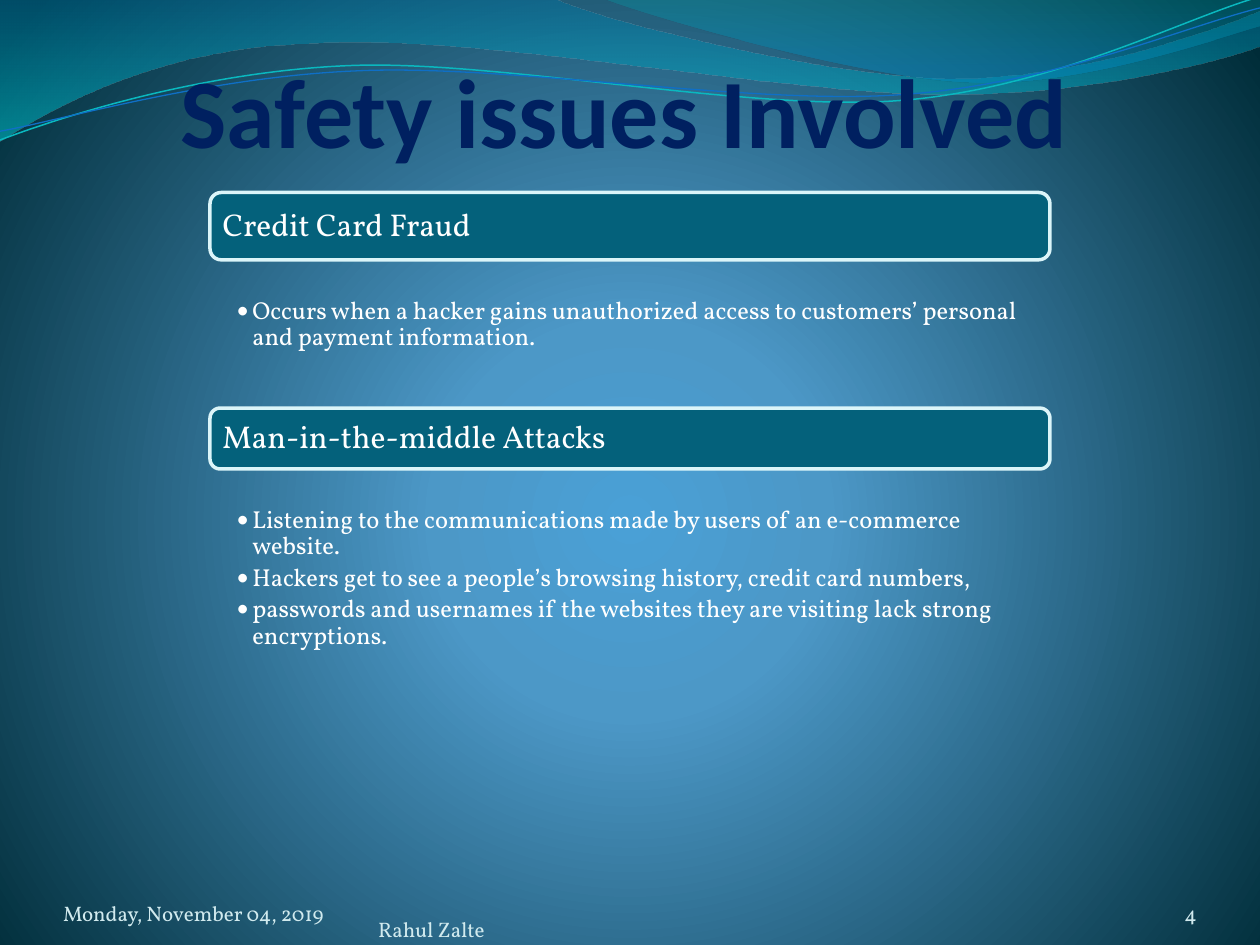
from dataclasses import dataclass
from typing import Optional

from lxml import etree
from pptx import Presentation
from pptx import util as u
from pptx.dml.color import RGBColor
from pptx.enum import shapes, text
from pptx.oxml import ns

NAVY = RGBColor(0x00, 0x20, 0x60)
PALE = RGBColor(0xD1, 0xEA, 0xEE)
WHITE = RGBColor(0xFF, 0xFF, 0xFF)
TEAL = RGBColor(0x04, 0x61, 0x7B)
ICE = RGBColor(0xDB, 0xF5, 0xF9)
AQUA = RGBColor(0x0A, 0xB8, 0xBF)
BLUE = RGBColor(0x0F, 0x6F, 0xC6)
WAVE_BLUE = RGBColor(0x00, 0x74, 0xA1)
WAVE_AQUA = RGBColor(0x00, 0xC6, 0xCF)
WAVE_GREEN = RGBColor(0x00, 0xA1, 0xA9)
WAVE_AZURE = RGBColor(0x00, 0x8B, 0xBF)
BACKGROUND_STOPS = (
    (0, RGBColor(0x4A, 0xA0, 0xD6)),
    (25, RGBColor(0x4C, 0x98, 0xC7)),
    (100, RGBColor(0x00, 0x2C, 0x38)),
)
TITLE_FONT, BODY_FONT = "Calibri", "Vollkorn"
LIST_LEFT, LIST_WIDTH = 120, 480


@dataclass(frozen=True)
class Stop:
    position: float
    color: RGBColor
    alpha: int


@dataclass(frozen=True)
class Wave:
    start: tuple
    segments: tuple
    stops: tuple = ()
    line_color: Optional[RGBColor] = None
    line_width: float = 0


@dataclass(frozen=True)
class Label:
    content: str
    left: float
    top: float
    width: float
    height: float
    size: float = 12
    color: RGBColor = PALE
    font: str = BODY_FONT
    bold: bool = False
    align: text.PP_ALIGN = text.PP_ALIGN.LEFT


@dataclass(frozen=True)
class Issue:
    heading: str
    top: float
    heading_height: float
    body_height: float
    points: tuple


WAVES = (
    Wave((0, 0), (
        ((317, -0.7),),
        ((343, 12), (478, 45), (546, 45)),
        ((614, 45), (690, 19), (720, 6.5)),
        ((721, 26),),
        ((708, 32), (626, 55), (537, 54)),
        ((448, 54), (275, 20), (185, 24.5)),
        ((93, 26), (33, 60), (-0.7, 81)),
    ), (Stop(0, WAVE_BLUE, 45), Stop(1, WAVE_AQUA, 55))),
    Wave((345, -0.7), (
        ((366, 8), (491, 45), (554, 47)),
        ((616, 50), (692, 23), (720, 15)),
        ((720, 0),),
    ), (Stop(0, WAVE_GREEN, 30), Stop(0.8, WAVE_AZURE, 45))),
    Wave((0, 80), (
        ((34.5, 67), (114, 41), (199.5, 37.5)),
        ((284.5, 34), (427, 64), (513.5, 57.5)),
        ((600, 51), (675.5, 11), (718.5, -1.5)),
    ), line_color=AQUA, line_width=0.85),
    Wave((0, 75), (
        ((34, 69), (118, 44), (204, 40.5)),
        ((290, 36.5), (430, 60.5), (516, 54)),
        ((602, 48), (677.5, 15), (720, 4.5)),
    ), line_color=BLUE, line_width=0.75),
)
LABELS = (
    Label("Safety issues Involved", 24, 24, 586.5, 72, 56, NAVY, TITLE_FONT, True,
          text.PP_ALIGN.RIGHT),
    Label("Monday, November 04, 2019", 36, 500, 168, 28.8),
    Label("Rahul Zalte", 216, 509.4, 264, 28.8),
    Label("4", 624, 500, 60, 28.8, align=text.PP_ALIGN.RIGHT),
)
ISSUES = (
    Issue("Credit Card Fraud", 110, 38.5, 84, (
        "Occurs when a hacker gains unauthorized access to customers’ personal "
        "and payment information.",
    )),
    Issue("Man-in-the-middle Attacks", 233.2, 34.8, 160.5, (
        "Listening to the communications made by users of an e-commerce website.",
        "Hackers get to see a people’s browsing history, credit card numbers,",
        "passwords and usernames if the websites they are visiting lack strong encryptions.",
    )),
)


def paint_background(slide) -> None:
    slide.background.fill.gradient()
    gradient = next(slide._element.iter(ns.qn("a:gradFill")))
    for child in list(gradient):
        gradient.remove(child)
    stop_list = etree.SubElement(gradient, ns.qn("a:gsLst"))
    for percent, color in BACKGROUND_STOPS:
        stop = etree.SubElement(stop_list, ns.qn("a:gs"), pos=str(percent * 1000))
        etree.SubElement(stop, ns.qn("a:srgbClr"), val=str(color))
    circle = etree.SubElement(gradient, ns.qn("a:path"), path="circle")
    etree.SubElement(circle, ns.qn("a:fillToRect"),
                     l="10000", t="110000", r="10000", b="100000")


def bend_segments(shape, segments: tuple) -> None:
    edges = list(shape._element.iter(ns.qn("a:lnTo")))
    for edge, segment in zip(edges, segments):
        if len(segment) == 1:
            continue
        curve = etree.Element(ns.qn("a:cubicBezTo"))
        for x, y in segment:
            etree.SubElement(curve, ns.qn("a:pt"), x=str(u.Pt(x) - shape.left),
                             y=str(u.Pt(y) - shape.top))
        edge.getparent().replace(edge, curve)


def draw_wave(slide, wave: Wave) -> None:
    builder = slide.shapes.build_freeform(u.Pt(wave.start[0]), u.Pt(wave.start[1]))
    anchors = [(u.Pt(segment[-1][0]), u.Pt(segment[-1][1])) for segment in wave.segments]
    builder.add_line_segments(anchors, close=bool(wave.stops))
    shape = builder.convert_to_shape()
    bend_segments(shape, wave.segments)
    shape.shadow.inherit = False
    if wave.stops:
        shape.line.fill.background()
        shape.fill.gradient()
        shape.fill.gradient_angle = 270
        for target, stop in zip(shape.fill.gradient_stops, wave.stops):
            target.position = stop.position
            target.color.rgb = stop.color
        for color, stop in zip(shape._element.iter(ns.qn("a:srgbClr")), wave.stops):
            etree.SubElement(color, ns.qn("a:alpha"), val=str(stop.alpha * 1000))
    else:
        shape.fill.background()
        shape.line.color.rgb = wave.line_color
        shape.line.width = u.Pt(wave.line_width)


def set_frame(frame, anchor: text.MSO_ANCHOR, left: float, top: float,
              right: float, bottom: float) -> None:
    frame.word_wrap = True
    frame.vertical_anchor = anchor
    frame.margin_left, frame.margin_top = u.Pt(left), u.Pt(top)
    frame.margin_right, frame.margin_bottom = u.Pt(right), u.Pt(bottom)


def add_run(paragraph, content: str, size: float, color: RGBColor,
            font: str = BODY_FONT, bold: bool = False) -> None:
    run = paragraph.add_run()
    run.text = content
    run.font.name, run.font.size, run.font.bold = font, u.Pt(size), bold
    run.font.color.rgb = color


def draw_label(slide, label: Label) -> None:
    box = slide.shapes.add_textbox(u.Pt(label.left), u.Pt(label.top),
                                   u.Pt(label.width), u.Pt(label.height))
    set_frame(box.text_frame, text.MSO_ANCHOR.BOTTOM, 0, 0, 0, 0)
    paragraph = box.text_frame.paragraphs[0]
    paragraph.alignment = label.align
    add_run(paragraph, label.content, label.size, label.color, label.font, label.bold)


def draw_issue(slide, issue: Issue) -> None:
    bar = slide.shapes.add_shape(shapes.MSO_SHAPE.ROUNDED_RECTANGLE, u.Pt(LIST_LEFT),
                                 u.Pt(issue.top), u.Pt(LIST_WIDTH), u.Pt(issue.heading_height))
    bar.shadow.inherit = False
    bar.fill.solid()
    bar.fill.fore_color.rgb = TEAL
    bar.line.color.rgb = ICE
    bar.line.width = u.Pt(2)
    set_frame(bar.text_frame, text.MSO_ANCHOR.MIDDLE, 5.4, 5, 5.4, 5)
    heading = bar.text_frame.paragraphs[0]
    heading.alignment = text.PP_ALIGN.LEFT
    heading.line_spacing = 0.9
    add_run(heading, issue.heading, 18, WHITE)

    body = slide.shapes.add_textbox(u.Pt(LIST_LEFT), u.Pt(issue.top + issue.heading_height),
                                    u.Pt(LIST_WIDTH), u.Pt(issue.body_height))
    set_frame(body.text_frame, text.MSO_ANCHOR.TOP, 15.2, 21.8, 10, 2)
    for index, point in enumerate(issue.points):
        paragraph = body.text_frame.paragraphs[0] if index == 0 else body.text_frame.add_paragraph()
        paragraph.line_spacing = 0.9
        paragraph.space_after = u.Pt(2.8)
        properties = paragraph._p.get_or_add_pPr()
        properties.set("marL", str(u.Pt(9)))
        properties.set("indent", str(u.Pt(-9)))
        etree.SubElement(properties, ns.qn("a:buFont"), typeface=TITLE_FONT)
        etree.SubElement(properties, ns.qn("a:buChar"), char="•")
        add_run(paragraph, point, 14, WHITE)


def main() -> None:
    presentation = Presentation()
    presentation.slide_width, presentation.slide_height = u.Pt(720), u.Pt(540)
    slide = presentation.slides.add_slide(presentation.slide_layouts[6])
    paint_background(slide)
    for draw, items in ((draw_wave, WAVES), (draw_label, LABELS), (draw_issue, ISSUES)):
        for item in items:
            draw(slide, item)
    presentation.save("out.pptx")


if __name__ == "__main__":
    main()
